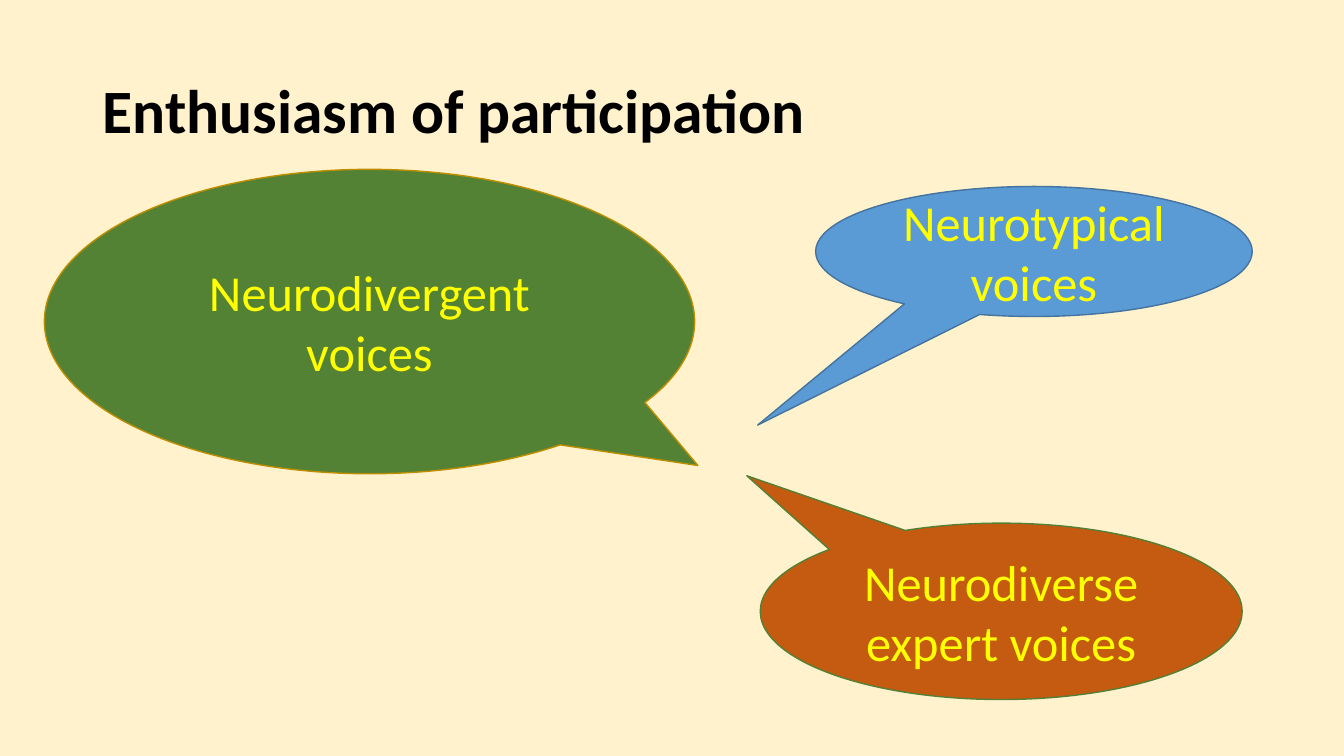
from pptx import Presentation
from pptx.dml.color import RGBColor
from pptx.enum.shapes import MSO_SHAPE as Shape
from pptx.enum.text import MSO_ANCHOR as Anchor, PP_ALIGN as Align
from pptx.util import Inches, Pt

WIDE, HIGH = 13.33, 7.5
FONT = "Calibri"
CREAM, BLACK, YELLOW = "FFF2CC", "000000", "FFFF00"

VOICES = [
    ("Neurodivergent voices", (0.44, 1.68, 6.45, 3.02), (0.505, 0.473), "548235", "BD8E00"),
    ("Neurodiverse expert voices", (7.54, 5.19, 4.78, 1.75), (-0.528, -0.769), "C55A11", "538035"),
    ("Neurotypical voices", (8.09, 1.85, 4.33, 1.29), (-0.633, 1.335), "5B9BD5", "43739E"),
]


def paint(target, color):
    if hasattr(target, "solid"):
        target.solid()
        target = target.fore_color
    target.rgb = RGBColor.from_string(color)


def write(shape, text, size, color, align, bold=False):
    frame = shape.text_frame
    frame.word_wrap = True
    frame.vertical_anchor = Anchor.MIDDLE
    line = frame.paragraphs[0]
    line.text = text
    line.alignment = align
    line.font.name = FONT
    line.font.size = Pt(size)
    line.font.bold = bold
    paint(line.font.color, color)
    return line


def title(slide, box, text):
    shape = slide.shapes.add_textbox(*map(Inches, box))
    line = write(shape, text, 44, BLACK, Align.LEFT, True)
    line.line_spacing = 0.9


def bubble(slide, text, box, tip, fill, edge):
    shape = slide.shapes.add_shape(Shape.OVAL_CALLOUT, *map(Inches, box))
    shape.shadow.inherit = False
    for i, share in enumerate(tip):
        shape.adjustments[i] = share
    paint(shape.fill, fill)
    paint(shape.line.color, edge)
    shape.line.width = Pt(1)
    write(shape, text, 36, YELLOW, Align.CENTER)


def main():
    deck = Presentation()
    deck.slide_width, deck.slide_height = Inches(WIDE), Inches(HIGH)
    slide = deck.slides.add_slide(deck.slide_layouts[6])
    paint(slide.background.fill, CREAM)
    title(slide, (0.92, 0.4, 11.5, 1.45), "Enthusiasm of participation")
    for voice in VOICES:
        bubble(slide, *voice)
    deck.save("out.pptx")


if __name__ == "__main__":
    main()
